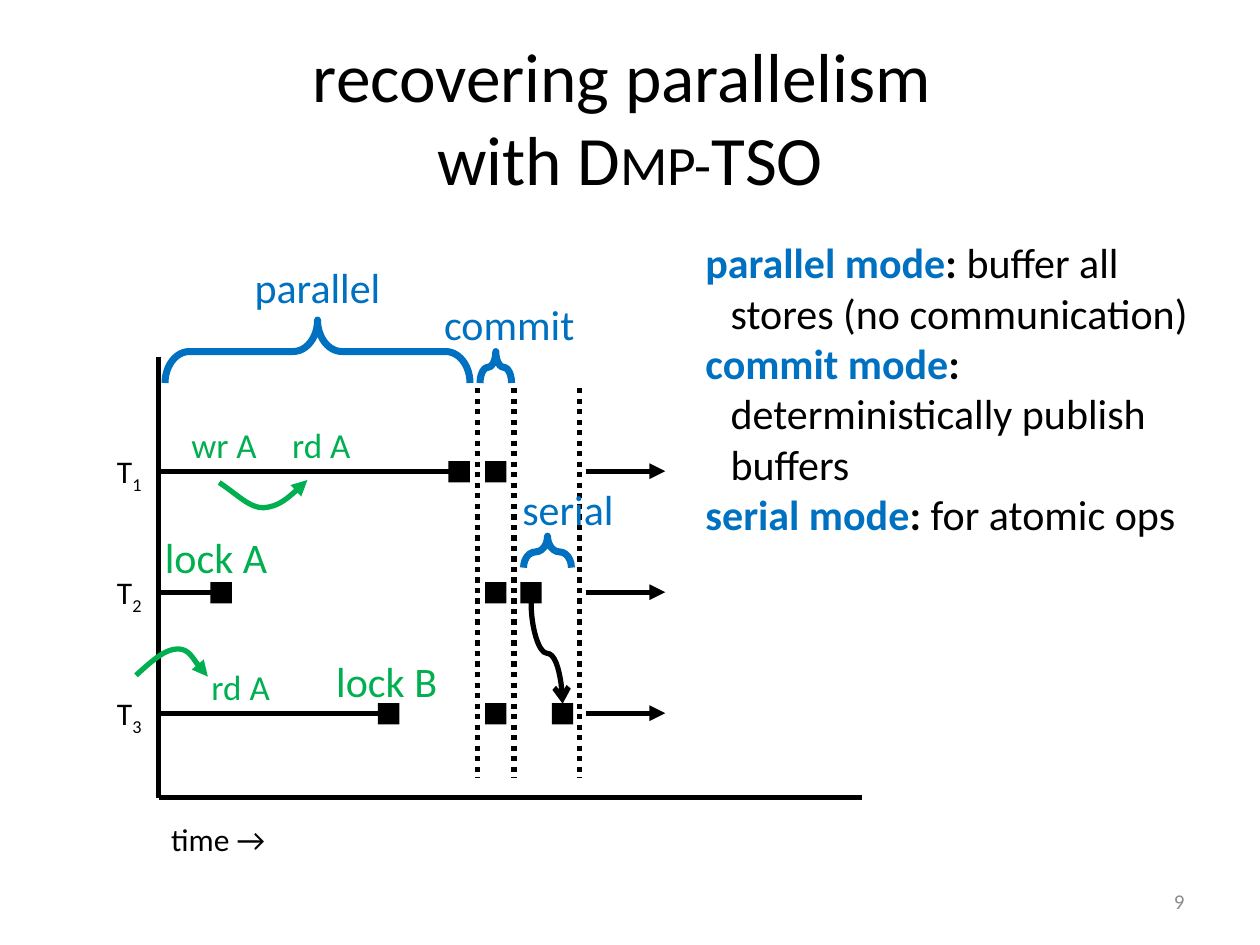
"""Build the slide on recovering parallelism with buffered stores."""
from lxml import etree
from pptx import Presentation
from pptx.dml.color import RGBColor
from pptx.enum.dml import MSO_LINE
from pptx.enum.shapes import MSO_CONNECTOR, MSO_SHAPE
from pptx.enum.text import MSO_ANCHOR, MSO_AUTO_SIZE, PP_ALIGN
from pptx.oxml.ns import qn
from pptx.util import Pt

PX = 9144
BLACK, BLUE, GREEN, GRAY = "000000", "0070C0", "00B050", "8C8C8C"
STRAIGHT, CURVE = MSO_CONNECTOR.STRAIGHT, MSO_CONNECTOR.CURVE
BRACE, SQUARE = MSO_SHAPE.LEFT_BRACE, MSO_SHAPE.RECTANGLE
DOTTED = MSO_LINE.ROUND_DOT
LEFT, CENTER, RIGHT = PP_ALIGN.LEFT, PP_ALIGN.CENTER, PP_ALIGN.RIGHT
MIDDLE = MSO_ANCHOR.MIDDLE
GROW, FIXED = MSO_AUTO_SIZE.SHAPE_TO_FIT_TEXT, MSO_AUTO_SIZE.NONE


def write_runs(paragraph, size, align, runs):
    paragraph.alignment = align
    for text, color, extras in runs:
        run = paragraph.add_run()
        run.text = text
        run.font.name = "Calibri"
        run.font.size = Pt(size)
        run.font.color.rgb = RGBColor.from_string(color)
        for name, value in extras.items():
            run.font._element.set(name, value)


def style_line(shape, color=BLACK, width=3, dash=None, tail=None):
    shape.line.color.rgb = RGBColor.from_string(color)
    shape.line.width = Pt(width)
    if dash:
        shape.line.dash_style = dash
    properties = shape._element.spPr
    if tail:
        etree.SubElement(properties.find(qn("a:ln")), qn("a:tailEnd"), type=tail)
    etree.SubElement(properties, qn("a:effectLst"))


presentation = Presentation()
presentation.slide_width, presentation.slide_height = 1000 * PX, 750 * PX
slide = presentation.slides.add_slide(presentation.slide_layouts[5])
shapes = slide.shapes

title = shapes.title
title.left, title.top, title.width, title.height = 50 * PX, 30 * PX, 900 * PX, 125 * PX
title.text_frame.auto_size = FIXED
title.text_frame.vertical_anchor = MIDDLE
title_paragraph = title.text_frame.paragraphs[0]
write_runs(title_paragraph, 39.6, CENTER, [("recovering parallelism ", BLACK, {})])
title_paragraph.add_line_break()
write_runs(title_paragraph, 39.6, CENTER, [("with ", BLACK, {}), ("Dmp-TSO", BLACK, {"cap": "small"})])

number = shapes.add_textbox(717 * PX, 695 * PX, 233 * PX, 40 * PX)
number.text_frame.word_wrap = True
number.text_frame.vertical_anchor = MIDDLE
write_runs(number.text_frame.paragraphs[0], 12, RIGHT, [("9", GRAY, {})])

modes = [
    ("parallel mode", " buffer all stores (no communication)"),
    ("commit mode", " deterministically publish buffers"),
    ("serial mode", " for atomic ops"),
]
notes = shapes.add_textbox(550 * PX, 183 * PX, 429 * PX, 252 * PX)
notes.text_frame.word_wrap = True
notes.text_frame.auto_size = GROW
for index, (mode, meaning) in enumerate(modes):
    paragraph = notes.text_frame.add_paragraph() if index else notes.text_frame.paragraphs[0]
    indent = paragraph._p.get_or_add_pPr()
    indent.set("marL", str(20 * PX))
    indent.set("indent", str(-20 * PX))
    write_runs(paragraph, 24, LEFT, [(mode, BLUE, {"b": "1"}), (":", BLACK, {"b": "1"}), (meaning, BLACK, {})])

thread_rows = [374, 470, 566]
lines = [
    (126, 283, 126, 633, {}),
    (126, 633, 684, 633, {}),
]
lines += [(x, 308, x, 617, {"dash": DOTTED}) for x in (379, 408, 460)]
lines += [(465, y, 528, y, {"tail": "triangle"}) for y in thread_rows]
lines += [(126, y, end, y, {}) for y, end in zip(thread_rows, (364, 175, 306))]
for x1, y1, x2, y2, style in lines:
    connector = shapes.add_connector(STRAIGHT, x1 * PX, y1 * PX, x2 * PX, y2 * PX)
    style_line(connector, **style)

handoff = shapes.add_connector(CURVE, 474 * PX, 506 * PX, 394 * PX, 531 * PX)
handoff._element.spPr.find(qn("a:xfrm")).set("rot", "16200000")
style_line(handoff, tail="arrow")

square_columns = [(356, 385), (167, 385, 413), (300, 385, 438)]
for y, columns in zip(thread_rows, square_columns):
    for x in columns:
        square = shapes.add_shape(SQUARE, x * PX, (y - 8) * PX, 17 * PX, 17 * PX)
        square.shadow.inherit = False
        square.fill.solid()
        square.fill.fore_color.rgb = RGBColor.from_string(BLACK)
        square.line.fill.background()

braces = [
    ("commit", 381, 279, 25, 25, (10, 0, 90, 80), False),
    ("parallel", 227, 158, 50, 242, (10, 5, 140, 5), True),
    ("serial", 422, 419, 25, 38, (10, 0, 90, 80), False),
]
for label, x, y, width, height, insets, wrap in braces:
    brace = shapes.add_shape(BRACE, x * PX, y * PX, width * PX, height * PX)
    brace.rotation = 90
    brace.adjustments[0], brace.adjustments[1] = 0.387, 0.5
    brace.fill.background()
    style_line(brace, BLUE, 4)
    frame = brace.text_frame
    frame.word_wrap = False
    frame.vertical_anchor = MIDDLE
    for side, inset in zip(("left", "top", "right", "bottom"), insets):
        setattr(frame, f"margin_{side}", inset * PX)
    frame._txBody.bodyPr.set("vert", "vert270")
    write_runs(frame.paragraphs[0], 24, CENTER, [(label, BLUE, {})])

labels = [
    (126, 646, 101, 40, 18, [("time →", BLACK, {})]),
    (121, 417, 109, 50, 24, [("lock A", GREEN, {})]),
    (257, 515, 101, 50, 24, [("lock B", GREEN, {})]),
    (142, 331, 73, 44, 20, [("wr A", GREEN, {})]),
    (222, 331, 68, 44, 20, [("rd A", GREEN, {})]),
    (158, 523, 68, 44, 20, [("rd A", GREEN, {})]),
]
for thread, y in enumerate(thread_rows, 1):
    runs = [("T", BLACK, {}), (str(thread), BLACK, {"baseline": "-25000"})]
    labels.append((83, y - 20, 42, 40, 18, runs))
for x, y, width, height, size, runs in labels:
    box = shapes.add_textbox(x * PX, y * PX, width * PX, height * PX)
    box.text_frame.word_wrap = False
    box.text_frame.auto_size = GROW
    write_runs(box.text_frame.paragraphs[0], size, LEFT, runs)

memory_arrows = [
    [(174, 383), (189, 393), (198, 403), (209, 403), (221, 402), (233, 392), (244, 381)],
    [(108, 536), (120, 525), (131, 515), (141, 515), (150, 515), (161, 534), (165, 537)],
]
for start, *controls in memory_arrows:
    builder = shapes.build_freeform(*start, scale=PX)
    builder.add_line_segments(controls, close=False)
    arrow = builder.convert_to_shape()
    arrow.fill.background()
    style_line(arrow, GREEN, tail="triangle")
    segments = list(arrow._element.iter(qn("a:lnTo")))
    outline = segments[0].getparent()
    for first in range(0, len(segments), 3):
        bezier = etree.SubElement(outline, qn("a:cubicBezTo"))
        for segment in segments[first:first + 3]:
            bezier.append(segment[0])
            outline.remove(segment)

presentation.save("out.pptx")
